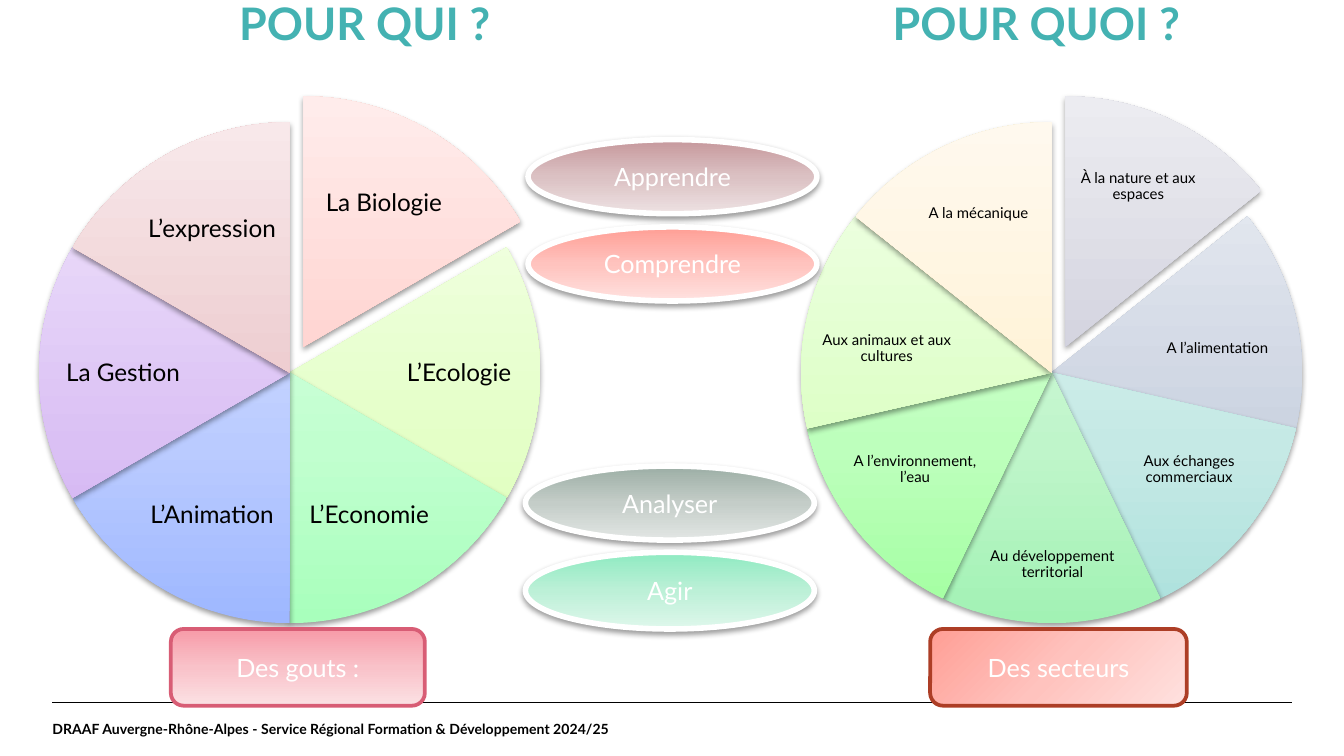
from copy import deepcopy

from pptx import Presentation
from pptx.dml.color import RGBColor
from pptx.enum.shapes import MSO_CONNECTOR, MSO_SHAPE
from pptx.enum.text import MSO_ANCHOR, MSO_AUTO_SIZE, PP_ALIGN
from pptx.oxml import parse_xml
from pptx.oxml.ns import nsdecls, qn
from pptx.util import Cm, Pt

THEME = {
    "font": "Lato",
    "title": "44B2B2", "black": "000000", "white": "FFFFFF",
    "title_size": 24, "button_size": 13.5, "footer_size": 7.5,
    "taste_size": 13, "sector_size": 8,
    # Gradients of the slices, clockwise from the top
    "tastes": ["FFBAB4 FFCECA FFECEB", "DAFFB0 E4FFC7 F5FFEA", "A8FFBC C1FFCF E7FFED",
               "9EB7FF BACBFF E5EBFF", "CBA4F1 DAC0F4 F1E6FC", "E3ABB0 EAC5C8 F8E8EA"],
    "sectors": ["B7B7CA CDCDDA ECECF1", "B2BED4 CAD2E0 EBEEF4", "ABE1DC C5E9E5 E8F7F6",
                "A2F2B4 BFF5CA E6FCEA", "A2FFA0 BDFFBC E6FFE6", "CFFFAD DCFFC5 F2FFE9",
                "FFEBBD FFF1D1 FFF9EE"],
    # Gradients and outlines of the ovals and boxes
    "pink": "F79BA8 F9C2C9 FBE1E4", "pink_line": "D85D75",
    "coral": "FF9E95 FFC3BE FFE1DF", "coral_line": "AD3E26",
    "mauve": "C6989C DBC1C3 EDE1E2", "grey": "9CAEA5 C4CDC8 E2E6E4",
    "mint": "8EEAC1 BCF0D7 DEF7EB",
}


def paint(sp, colours, middle, angle, shadow=True):
    """Fill with a three-stop gradient (clockwise angle) and set the soft shadow."""
    sp.fill.gradient()
    sp.fill.gradient_angle = 360 - angle
    stops = sp._element.spPr.find(qn("a:gradFill")).find(qn("a:gsLst"))
    stops.insert(1, deepcopy(stops[0]))
    for stop, place, colour in zip(sp.fill.gradient_stops, (0, middle, 1), colours.split()):
        stop.position = place
        stop.color.rgb = RGBColor.from_string(colour)
    sp.shadow.inherit = False
    if shadow:
        sp._element.spPr.find(qn("a:effectLst")).append(parse_xml(
            f'<a:outerShdw {nsdecls("a")} blurRad="{Pt(3.1)}" dist="{Pt(1.6)}" dir="5400000" '
            f'rotWithShape="0"><a:srgbClr val="{THEME["black"]}"><a:alpha val="38000"/>'
            '</a:srgbClr></a:outerShdw>'))


def write(sp, text, size, colour, align=PP_ALIGN.CENTER, inset=0.0, bold=False, spacing=1.0):
    """Set the text of a shape and format its frame, paragraph and run."""
    tf = sp.text_frame
    tf.text = text
    tf.word_wrap = True
    tf.auto_size = MSO_AUTO_SIZE.NONE
    tf.vertical_anchor = MSO_ANCHOR.MIDDLE
    tf.margin_left = tf.margin_right = tf.margin_top = tf.margin_bottom = Cm(inset)
    p = tf.paragraphs[0]
    p.alignment = align
    p.line_spacing = spacing
    for r in p.runs:
        r.font.name = THEME["font"]
        r.font.size = Pt(size)
        r.font.bold = bold
        r.font.color.rgb = RGBColor.from_string(colour)


prs = Presentation()
prs.slide_width, prs.slide_height = Cm(25.4), Cm(14.29)
s = prs.slides.add_slide(prs.slide_layouts[5])

# Title: two headings parted by a tab stop
title = s.shapes.title
title.left, title.top, title.width, title.height = Cm(4.52), Cm(0.23), Cm(20.5), Cm(1.52)
write(title, "POUR QUI ?\tPOUR QUOI ?", THEME["title_size"], THEME["title"],
      PP_ALIGN.LEFT, bold=True, spacing=0.9)
title.text_frame.margin_bottom = Cm(0.99)
title.text_frame.paragraphs[0]._p.get_or_add_pPr().append(parse_xml(
    f'<a:tabLst {nsdecls("a")}><a:tab pos="{Cm(12.35)}" algn="l"/></a:tabLst>'))

# Footer rule and text
rule = s.shapes.add_connector(MSO_CONNECTOR.STRAIGHT, Cm(0.99), Cm(13.28), Cm(24.41), Cm(13.28))
rule.line.color.rgb = RGBColor.from_string(THEME["black"])
rule.line.width = Pt(0.8)
rule._element.spPr.append(parse_xml(f'<a:effectLst {nsdecls("a")}/>'))
footer = s.shapes.add_textbox(Cm(0.99), Cm(13.28), Cm(16.41), Cm(0.99))
write(footer, "DRAAF Auvergne-Rhône-Alpes - Service Régional Formation & Développement 2024/25",
      THEME["footer_size"], THEME["black"], PP_ALIGN.LEFT, bold=True)

# Wheels: equal slices clockwise from the top, the first one pulled out
# Each label: text, left, top, width, height
tastes = [
    ("La Biologie", 5.87, 2.84, 2.77, 2.03),
    ("L’Ecologie", 7.24, 6.1, 2.87, 1.93),
    ("L’Economie", 5.59, 8.74, 2.77, 2.03),
    ("L’Animation", 2.62, 8.74, 2.77, 2.03),
    ("La Gestion", 0.89, 6.1, 2.87, 1.93),
    ("L’expression", 2.62, 3.33, 2.77, 2.03),
]
sectors = [
    ("À la nature et aux espaces", 20.22, 2.72, 2.59, 1.63),
    ("A l’alimentation", 21.64, 5.72, 2.74, 1.75),
    ("Aux échanges commerciaux", 21.23, 7.98, 2.49, 1.8),
    ("Au développement territorial", 18.62, 9.78, 2.54, 1.8),
    ("A l’environnement, l’eau", 16.05, 7.98, 2.49, 1.8),
    ("Aux animaux et aux cultures", 15.39, 5.72, 2.74, 1.75),
    ("A la mécanique", 17.2, 3.23, 2.59, 1.63),
]
DIAMETER, WHEEL_TOP = 9.47, 2.31
PULL_X, PULL_Y = 0.26, -0.49
ADJUST_PER_DEGREE = 0.6
for wheel_left, labels, ramps, size, inset in (
        (0.74, tastes, THEME["tastes"], THEME["taste_size"], 0.05),
        (15.14, sectors, THEME["sectors"], THEME["sector_size"], 0.03)):
    wheel = s.shapes.add_group_shape()
    step = 360 / len(labels)
    for i, ((text, *box), ramp) in enumerate(zip(labels, ramps)):
        pulled = i == 0
        piece = wheel.shapes.add_shape(
            MSO_SHAPE.PIE, Cm(wheel_left + PULL_X * pulled), Cm(WHEEL_TOP + PULL_Y * pulled),
            Cm(DIAMETER), Cm(DIAMETER))
        for side in (0, 1):
            piece.adjustments[side] = (270 + (i + side) * step) % 360 * ADJUST_PER_DEGREE
        paint(piece, ramp, 0.35, 270)
        piece.line.fill.background()
        label = wheel.shapes.add_textbox(*map(Cm, box))
        write(label, text, size, THEME["black"], inset=inset, spacing=0.9)

# Action ovals between the wheels and the box under each wheel
OVAL, BOX = MSO_SHAPE.OVAL, MSO_SHAPE.ROUNDED_RECTANGLE
for kind, text, box, ramp, angle, outline, weight in (
        (OVAL, "Apprendre", (9.98, 2.64, 5.46, 1.4), "mauve", 90, "white", 3),
        (OVAL, "Comprendre", (9.98, 4.29, 5.46, 1.4), "coral", 90, "white", 3),
        (OVAL, "Analyser", (9.93, 8.81, 5.46, 1.4), "grey", 90, "white", 3),
        (OVAL, "Agir", (9.93, 10.44, 5.46, 1.45), "mint", 90, "white", 3),
        (BOX, "Des gouts :", (3.23, 11.89, 4.8, 1.45), "pink", 90, "pink_line", 2),
        (BOX, "Des secteurs", (17.58, 11.89, 4.85, 1.45), "coral", 45, "coral_line", 2)):
    sp = s.shapes.add_shape(kind, *map(Cm, box))
    paint(sp, THEME[ramp], 0.5, angle, shadow=kind == OVAL)
    sp.line.color.rgb = RGBColor.from_string(THEME[outline])
    sp.line.width = Pt(weight)
    write(sp, text, THEME["button_size"], THEME["white"], inset=0.1)

prs.save("out.pptx")
